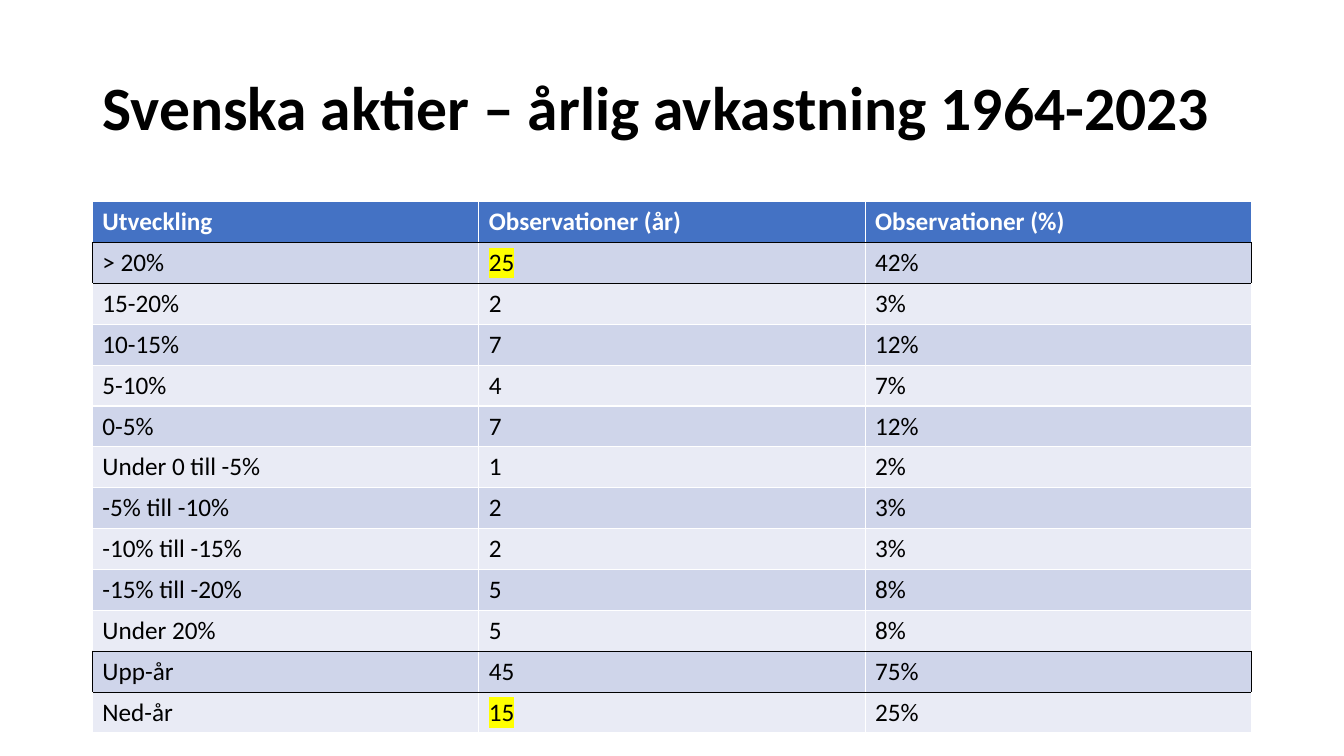
from lxml import etree
from pptx import Presentation
from pptx.dml.color import RGBColor
from pptx.enum.text import MSO_ANCHOR
from pptx.oxml.ns import qn
from pptx.util import Pt

MIDDLE = MSO_ANCHOR.MIDDLE
FONT = "Calibri"
COLOURS = {
    "text": "000000",
    "header_text": "FFFFFF",
    "header": "4472C4",
    "odd_row": "CFD5EA",
    "even_row": "E9EBF5",
    "grid": "FFFFFF",
    "frame": "000000",
    "highlight": "FFFF00",
}
LEFT = 66
WIDTH = 828
ROW_HEIGHT = 29.2
RETURNS = [
    ("Utveckling", "Observationer (år)", "Observationer (%)"),
    ("> 20%", "25", "42%"),
    ("15-20%", "2", "3%"),
    ("10-15%", "7", "12%"),
    ("5-10%", "4", "7%"),
    ("0-5%", "7", "12%"),
    ("Under 0 till -5%", "1", "2%"),
    ("-5% till -10%", "2", "3%"),
    ("-10% till -15%", "2", "3%"),
    ("-15% till -20%", "5", "8%"),
    ("Under 20%", "5", "8%"),
    ("Upp-år", "45", "75%"),
    ("Ned-år", "15", "25%"),
]
FRAMED_ROWS = {1, 11}
HIGHLIGHTED_CELLS = {(1, 1), (12, 1)}


def colour(name):
    return RGBColor.from_string(COLOURS[name])


def add_span(para, text, size, colour_name, bold):
    span = para.add_run()
    span.text = text
    span.font.size = Pt(size)
    span.font.name = FONT
    span.font.bold = bold
    span.font.color.rgb = colour(colour_name)
    return span


def highlight(span):
    mark = etree.Element(qn("a:highlight"))
    etree.SubElement(mark, qn("a:srgbClr"), val=COLOURS["highlight"])
    span.font._element.find(qn("a:latin")).addprevious(mark)


def set_borders(cell, borders):
    properties = cell._tc.get_or_add_tcPr()
    for position, (side, colour_name) in enumerate(borders.items()):
        line = etree.Element(qn(f"a:ln{side}"), w=str(Pt(1)))
        fill = etree.SubElement(line, qn("a:solidFill"))
        etree.SubElement(fill, qn("a:srgbClr"), val=COLOURS[colour_name])
        properties.insert(position, line)


def cell_borders(row, column):
    framed = row in FRAMED_ROWS
    black_sides = {
        "L": framed and column == 0,
        "R": framed and column == len(RETURNS[0]) - 1,
        "T": framed or row - 1 in FRAMED_ROWS,
        "B": framed or row + 1 in FRAMED_ROWS,
    }
    return {side: "frame" if black else "grid" for side, black in black_sides.items()}


def add_title(page, text):
    box = page.shapes.add_textbox(Pt(LEFT), Pt(27), Pt(WIDTH), Pt(104.4))
    frame = box.text_frame
    frame.word_wrap = True
    frame.vertical_anchor = MIDDLE
    para = frame.paragraphs[0]
    para.line_spacing = 0.9
    add_span(para, text, 44, "text", True)


def add_returns_table(page):
    columns = len(RETURNS[0])
    table = page.shapes.add_table(
        len(RETURNS), columns, Pt(LEFT), Pt(144), Pt(WIDTH), Pt(ROW_HEIGHT * len(RETURNS))
    ).table
    for column in table.columns:
        column.width = Pt(WIDTH / columns)
    for row, texts in enumerate(RETURNS):
        table.rows[row].height = Pt(ROW_HEIGHT)
        header = row == 0
        fill_name = "header" if header else "odd_row" if row % 2 else "even_row"
        for column, text in enumerate(texts):
            cell = table.cell(row, column)
            cell.fill.solid()
            cell.fill.fore_color.rgb = colour(fill_name)
            set_borders(cell, cell_borders(row, column))
            para = cell.text_frame.paragraphs[0]
            span = add_span(para, text, 18, "header_text" if header else "text", header)
            if (row, column) in HIGHLIGHTED_CELLS:
                highlight(span)


def main():
    deck = Presentation()
    deck.slide_width = Pt(960)
    deck.slide_height = Pt(540)
    page = deck.slides.add_slide(deck.slide_layouts[6])
    add_title(page, "Svenska aktier – årlig avkastning 1964-2023")
    add_returns_table(page)
    deck.save("out.pptx")


if __name__ == "__main__":
    main()
